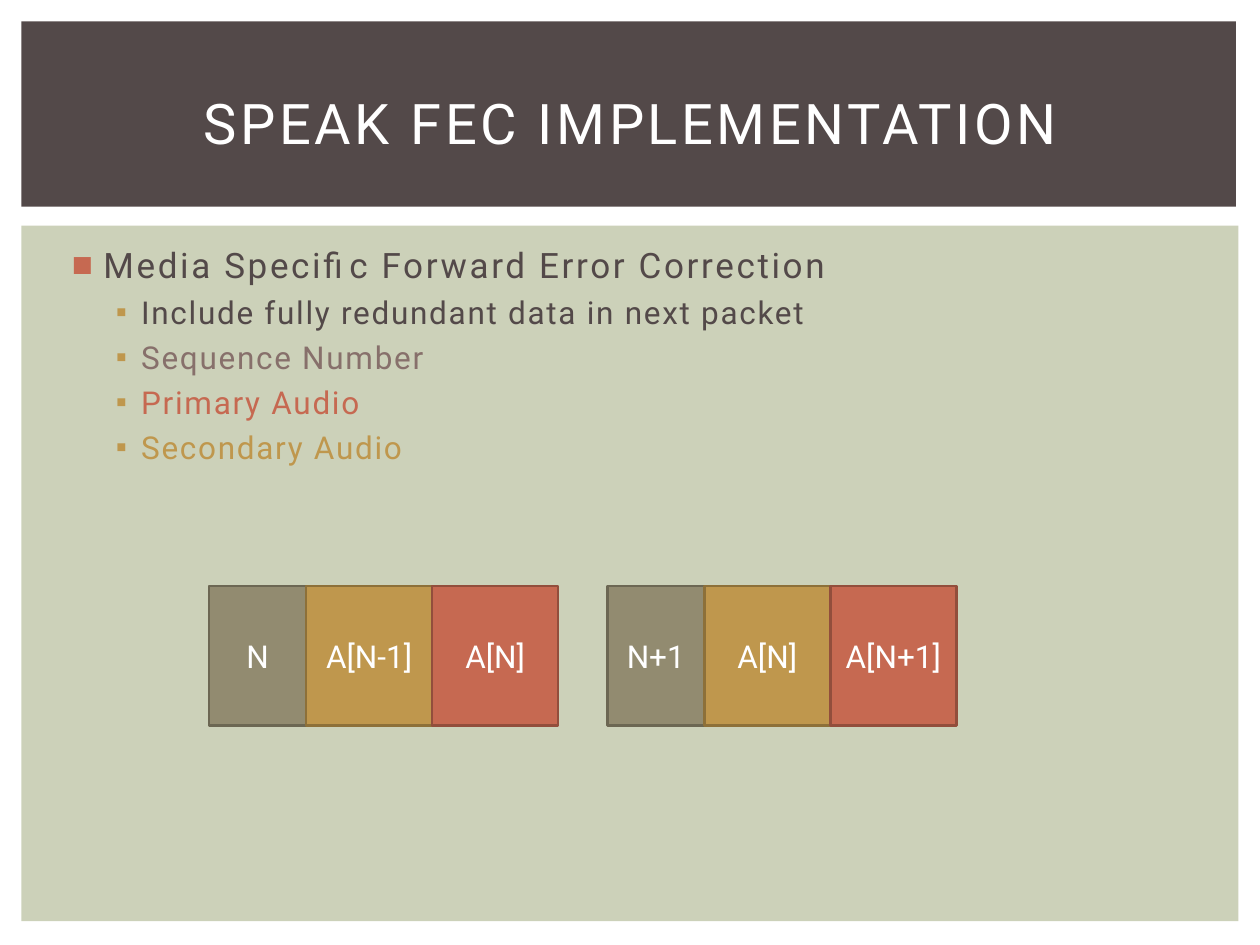
from dataclasses import dataclass

from lxml import etree
from pptx import Presentation
from pptx import util as u
from pptx.dml.color import RGBColor
from pptx.enum import shapes, text
from pptx.oxml import ns


@dataclass(frozen=True)
class Theme:
    face: str = "Roboto"
    dark: str = "534949"
    sage: str = "CCD1B9"
    white: str = "FFFFFF"
    mauve: str = "87706B"
    red: str = "C66951"
    gold: str = "BF974D"
    olive: str = "928B70"
    rust: str = "924E3C"
    brown: str = "8D7039"
    moss: str = "6C6753"
    head: int = 32
    lead: int = 20
    base: int = 18


class Deck:
    """Draws styled elements on the current slide."""

    def __init__(self, theme):
        self.theme = theme
        self.prs = Presentation()
        self.prs.slide_width, self.prs.slide_height = u.Inches(10), u.Inches(7.5)
        self.slide = self.prs.slides.add_slide(self.prs.slide_layouts[1])

    def style(self, para, size, color, space=0):
        font = para.font
        font.name, font.size = self.theme.face, u.Pt(size)
        font.color.rgb = RGBColor.from_string(color)
        if space:
            font._rPr.set("spc", str(int(space * 100)))

    def place(self, shape, box):
        shape.left, shape.top, shape.width, shape.height = map(u.Inches, box)

    def rect(self, box, fill, line=None):
        shape = self.slide.shapes.add_shape(
            shapes.MSO_SHAPE.RECTANGLE, *map(u.Inches, box))
        shape.shadow.inherit = False
        shape.fill.solid()
        shape.fill.fore_color.rgb = RGBColor.from_string(fill)
        if line:
            shape.line.color.rgb = RGBColor.from_string(line)
            shape.line.width = u.Pt(1.5)
        else:
            shape.line.fill.background()
        return shape

    def panel(self, box, fill):
        node = self.rect(box, fill)._element
        node.getparent().insert(2, node)

    def cell(self, box, label, fill, line):
        frame = self.rect(box, fill, line).text_frame
        frame.vertical_anchor = text.MSO_ANCHOR.MIDDLE
        frame.word_wrap = True
        para = frame.paragraphs[0]
        para.text, para.alignment = label, text.PP_ALIGN.CENTER
        self.style(para, self.theme.base, self.theme.white)

    def title(self, box, label):
        shape = self.slide.shapes.title
        self.place(shape, box)
        frame = shape.text_frame
        frame.text = label
        frame.auto_size = text.MSO_AUTO_SIZE.NONE
        frame.vertical_anchor = text.MSO_ANCHOR.MIDDLE
        para = frame.paragraphs[0]
        para.alignment = text.PP_ALIGN.CENTER
        self.style(para, self.theme.head, self.theme.white, 2)

    def bullet(self, para, mark, color, left, hang):
        props = para._p.get_or_add_pPr()
        props.set("marL", str(u.Inches(left)))
        props.set("indent", str(-u.Inches(hang)))
        tint = etree.SubElement(props, ns.qn("a:buClr"))
        etree.SubElement(tint, ns.qn("a:srgbClr"), val=color)
        etree.SubElement(props, ns.qn("a:buChar"), char=mark)

    def body(self, box, items):
        shape = self.slide.placeholders[1]
        self.place(shape, box)
        frame = shape.text_frame
        frame.text = "\n".join(label for label, _, _ in items)
        frame.auto_size = text.MSO_AUTO_SIZE.NONE
        for para, (_, level, color) in zip(frame.paragraphs, items):
            para.level = level
            if level:
                size, space = self.theme.base, 1
                self.bullet(para, "▪", self.theme.gold, 0.6, 0.2)
            else:
                size, space = self.theme.lead, 1.5
                self.bullet(para, "■", self.theme.red, 0.3, 0.25)
            para.space_before = u.Pt(round(size * 0.235, 1))
            self.style(para, size, color, space)

    def packet(self, left, labels):
        t = self.theme
        looks = ((0.77, t.olive, t.moss), (1, t.gold, t.brown), (1, t.red, t.rust))
        for label, (width, fill, line) in zip(labels, looks):
            self.cell((left, 4.65, width, 1.11), label, fill, line)
            left += width


def main():
    t = Theme()
    deck = Deck(t)
    deck.panel((0.17, 0.17, 9.64, 1.47), t.dark)
    deck.panel((0.17, 1.79, 9.66, 5.52), t.sage)
    deck.title((0.42, 0.39, 9.17, 1.15), "SPEAK FEC IMPLEMENTATION")
    deck.body((0.42, 1.88, 9.19, 4.82), (
        ("Media Specific Forward Error Correction", 0, t.dark),
        ("Include fully redundant data in next packet", 1, t.dark),
        ("Sequence Number", 1, t.mauve),
        ("Primary Audio", 1, t.red),
        ("Secondary Audio", 1, t.gold),
    ))
    deck.packet(1.66, ("N", "A[N-1]", "A[N]"))
    deck.packet(4.82, ("N+1", "A[N]", "A[N+1]"))
    deck.prs.save("out.pptx")


if __name__ == "__main__":
    main()
